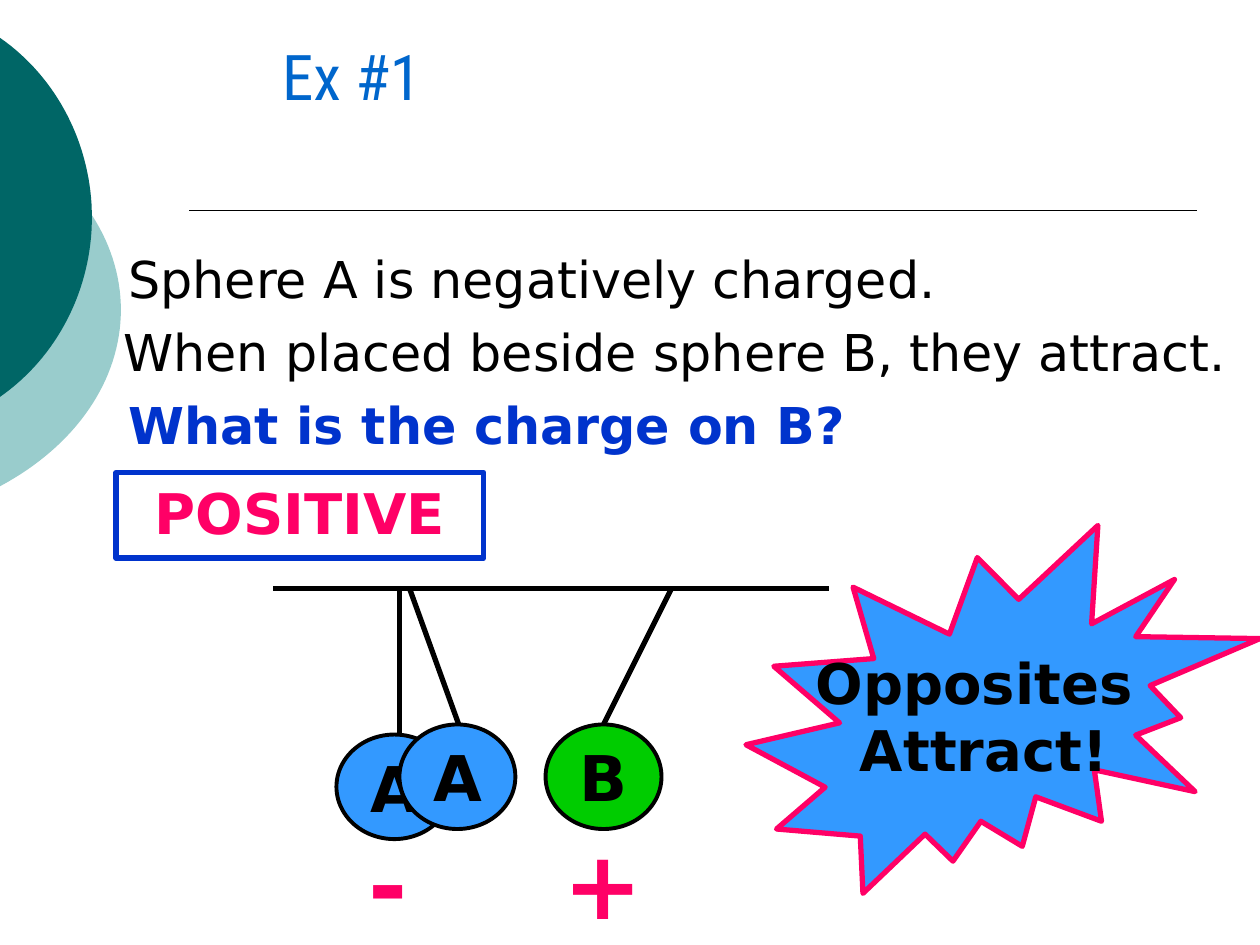
from lxml import etree
from pptx import Presentation, util as u
from pptx.dml.color import RGBColor
from pptx.enum import shapes as sh, text as tx
from pptx.oxml import ns

COLORS = {"black": "000000", "teal": "006666", "pale": "99CCCC", "title": "0066CC",
          "question": "0033CC", "pink": "FF0066", "sphere": "3399FF", "green": "00CC00"}
BODY_FONT = "DejaVu Sans"
TITLE_FONT = "Roboto Condensed"

prs = Presentation()
prs.slide_width, prs.slide_height = u.Inches(10), u.Inches(7.5)
slide = prs.slides.add_slide(prs.slide_layouts[6])


def put_text(holder, content, size, color="black", bold=True, font=BODY_FONT,
             align=tx.PP_ALIGN.CENTER, anchor=tx.MSO_ANCHOR.TOP, wrap=True):
    frame = holder.text_frame
    frame.word_wrap = wrap
    frame.vertical_anchor = anchor
    frame.text = content
    for para in frame.paragraphs:
        para.alignment = align
        para.font.size, para.font.bold, para.font.name = u.Pt(size), bold, font
        para.font.color.rgb = RGBColor.from_string(COLORS[color])


def paint(part, fill=None, line=None, width=1):
    part.shadow.inherit = False
    if fill:
        part.fill.solid()
        part.fill.fore_color.rgb = RGBColor.from_string(COLORS[fill])
    else:
        part.fill.background()
    if line:
        part.line.color.rgb = RGBColor.from_string(COLORS[line])
        part.line.width = u.Pt(width)
    else:
        part.line.fill.background()


# Circle segments at the left edge: top, bottom, bulge, control x, control y
STEPS = 32
for color, top, bottom, bulge, ctrl_x, ctrl_y in [
        ("pale", 1.06, 3.86, 0.96, 0.6, (1.38, 1.9)),
        ("teal", 0.3, 3.15, 0.73, 0.46, (0.62, 1.16))]:
    middle = (top + bottom) / 2
    upper = []
    for step in range(STEPS + 1):
        t = step / STEPS
        weights = ((1 - t) ** 3, 3 * t * (1 - t) ** 2, 3 * t ** 2 * (1 - t), t ** 3)
        upper.append((sum(w * x for w, x in zip(weights, (0, ctrl_x, bulge, bulge))),
                      sum(w * y for w, y in zip(weights, (top, *ctrl_y, middle)))))
    lower = [(x, 2 * middle - y) for x, y in reversed(upper[:-1])]
    outline = slide.shapes.build_freeform(0, u.Inches(top), scale=1.0)
    outline.add_line_segments([(u.Inches(x), u.Inches(y)) for x, y in upper[1:] + lower])
    paint(outline.convert_to_shape(), color)

# Title rule, support bar and strings
for x1, y1, x2, y2, width in [(1.5, 1.67, 9.5, 1.67, 1),
                              (2.17, 4.67, 6.58, 4.67, 3),
                              (3.17, 4.67, 3.17, 5.83, 3),
                              (5.33, 4.67, 4.75, 5.83, 3),
                              (3.25, 4.67, 3.67, 5.83, 3)]:
    string = slide.shapes.add_connector(sh.MSO_CONNECTOR.STRAIGHT, u.Inches(x1),
                                        u.Inches(y1), u.Inches(x2), u.Inches(y2))
    string.line.color.rgb = RGBColor.from_string(COLORS["black"])
    string.line.width = u.Pt(width)
    etree.SubElement(string._element.spPr, ns.qn("a:effectLst"))

# Title, statements and charge signs
left = {"align": tx.PP_ALIGN.LEFT}
for content, x, y, w, h, style in [
        ("Ex #1", 1.5, 0.25, 2.58, 1.25,
         {"size": 36, "color": "title", "bold": False, "font": TITLE_FONT, "wrap": False}),
        ("Sphere A is negatively charged.", 0.92, 1.92, 8.16, 0.67,
         {"size": 29, "bold": False, **left}),
        ("When placed beside sphere B, they attract.", 0.88, 2.5, 9.12, 0.67,
         {"size": 29, "bold": False, **left}),
        ("What is the charge on B?", 0.92, 3.08, 6.75, 0.67,
         {"size": 29, "color": "question", **left}),
        ("-", 2.83, 6.5, 0.5, 1, {"size": 54, "color": "pink"}),
        ("+", 4.25, 6.5, 1.08, 1, {"size": 54, "color": "pink"})]:
    statement = slide.shapes.add_textbox(u.Inches(x), u.Inches(y), u.Inches(w), u.Inches(h))
    put_text(statement, content, **style)

# Spheres
for label, x, y, fill in [("A", 2.67, 5.83, "sphere"), ("B", 4.33, 5.75, "green"),
                          ("A", 3.17, 5.75, "sphere")]:
    sphere = slide.shapes.add_shape(sh.MSO_SHAPE.OVAL, u.Inches(x), u.Inches(y),
                                    u.Inches(0.92), u.Inches(0.83))
    paint(sphere, fill, "black", 2.25)
    put_text(sphere, label, 36, anchor=tx.MSO_ANCHOR.MIDDLE, wrap=False)

# Burst with the rule
burst = slide.shapes.add_shape(sh.MSO_SHAPE.EXPLOSION2, u.Inches(5.92), u.Inches(4.17),
                               u.Inches(4.08), u.Inches(2.92))
paint(burst, "sphere", "pink", 3)
put_text(burst, "Opposites \nAttract!", 32, anchor=tx.MSO_ANCHOR.MIDDLE, wrap=False)

# Answer box
answer = slide.shapes.add_shape(sh.MSO_SHAPE.RECTANGLE, u.Inches(0.92), u.Inches(3.75),
                                u.Inches(2.92), u.Inches(0.68))
paint(answer, line="question", width=3)
put_text(answer, "POSITIVE", 32, color="pink")

prs.save("out.pptx")
